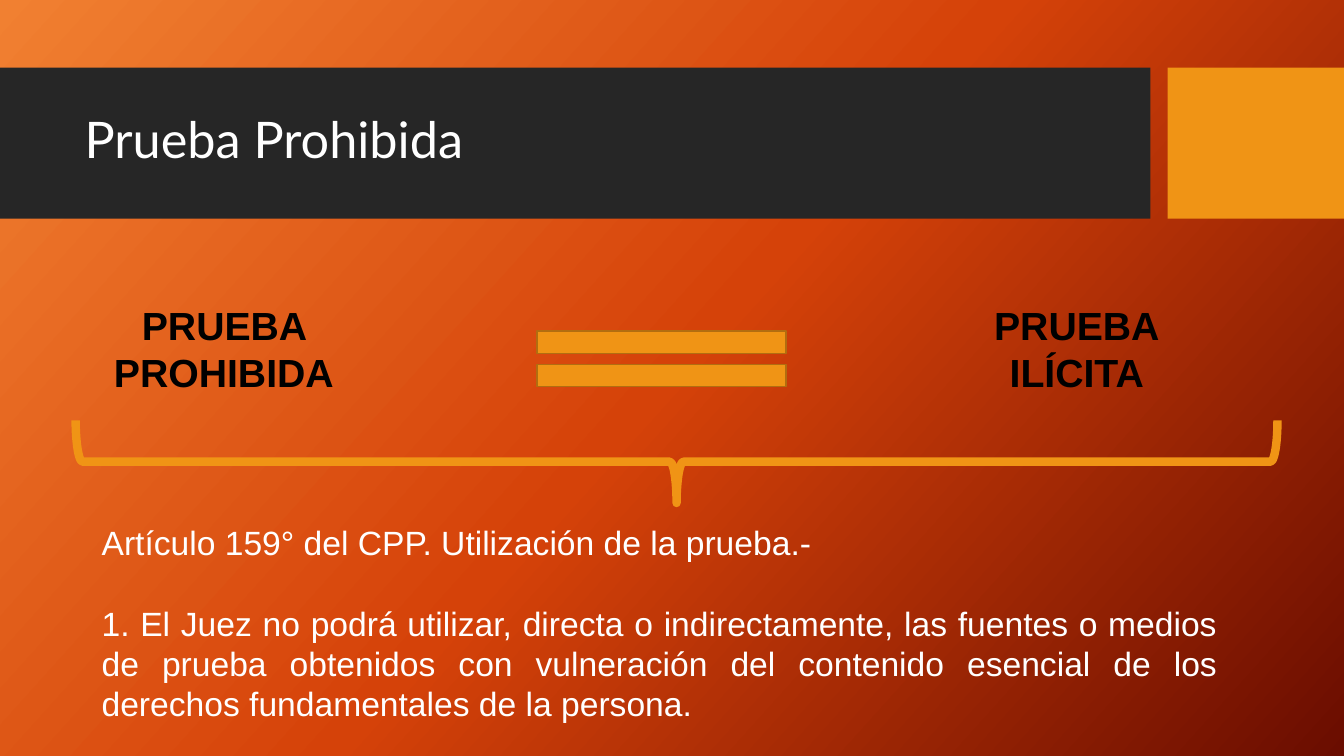
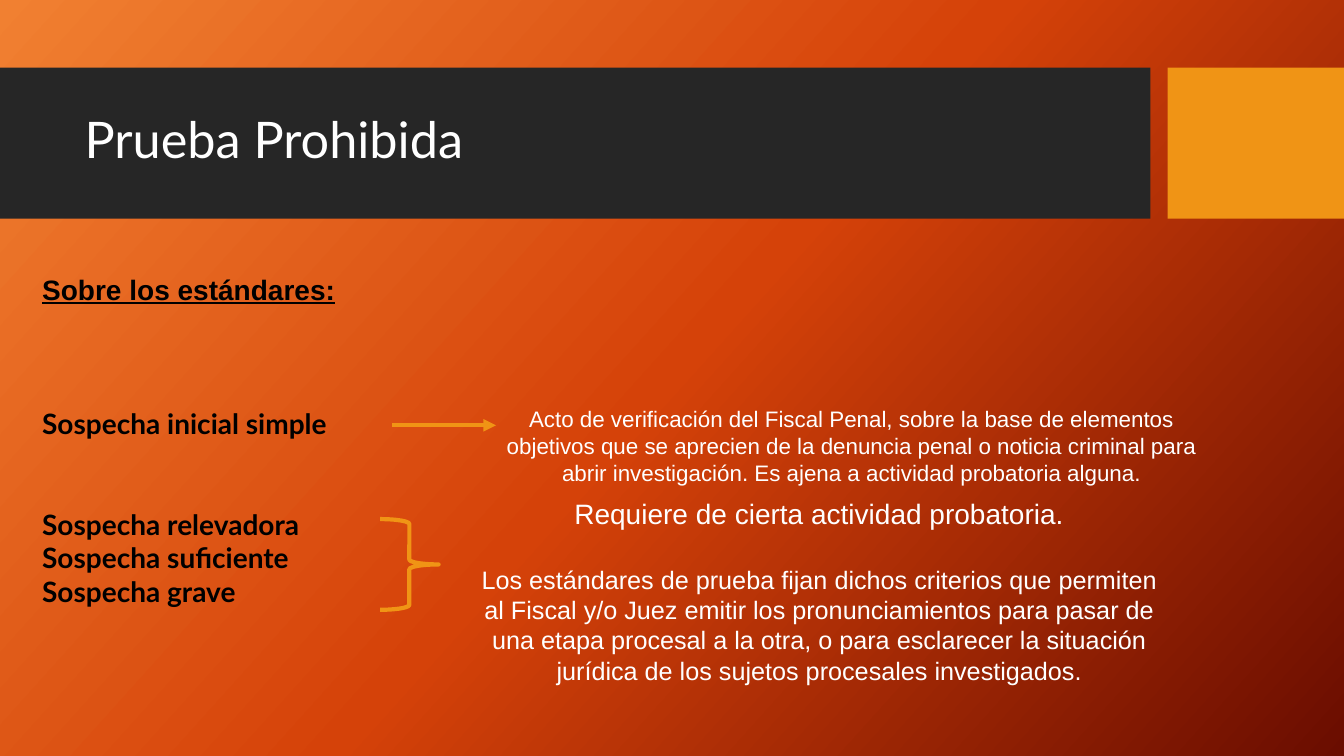
from lxml.etree import SubElement
from pptx import Presentation
from pptx.dml.color import RGBColor
from pptx.enum.shapes import MSO_CONNECTOR, MSO_SHAPE
from pptx.enum.text import MSO_ANCHOR, PP_ALIGN
from pptx.oxml.ns import qn
from pptx.util import Inches, Pt

# Shared colours
WHITE = RGBColor(0xFF, 0xFF, 0xFF)
BLACK = RGBColor(0x00, 0x00, 0x00)
CHARCOAL = RGBColor(0x26, 0x26, 0x26)
AMBER = RGBColor(0xF0, 0x94, 0x15)
BROWN = RGBColor(0xB2, 0x6D, 0x10)
BACKGROUND_STOPS = [
    (0, RGBColor(0xF1, 0x80, 0x31)),
    (50, RGBColor(0xD5, 0x42, 0x09)),
    (100, RGBColor(0x6A, 0x0D, 0x00)),
]
BACKGROUND_ANGLE = 42

# Shared text formats
LINE_HEIGHT = 1.2
TITLE = {"name": "Lato", "size": Pt(36)}
ARTICLE = {"name": "Arial", "size": Pt(24)}
TERM = {"name": "Arial", "size": Pt(28), "bold": True}
HEADING = {"name": "Arial", "size": Pt(20), "bold": True, "underline": True}
STANDARD = {"name": "Lato", "size": Pt(20), "bold": True}
REQUIREMENT = {"name": "Arial", "size": Pt(20)}
EXPLANATION = {"name": "Arial", "size": Pt(18)}
DEFINITION = {"name": "Arial", "size": Pt(16)}


def add_text(slide, box, lines, color, alignment, anchor=MSO_ANCHOR.TOP, line_spacing=None):
    """Write lines of (text, format, space before in points) inside the box."""
    frame = slide.shapes.add_textbox(*map(Inches, box)).text_frame
    frame.word_wrap = True
    frame.vertical_anchor = anchor
    for index, (text, text_format, space_before) in enumerate(lines):
        paragraph = frame.add_paragraph() if index else frame.paragraphs[0]
        paragraph.alignment = alignment
        paragraph.space_before = Pt(space_before)
        paragraph.line_spacing = line_spacing or Pt(text_format["size"].pt * LINE_HEIGHT)
        run = paragraph.add_run()
        run.text = text
        for attribute, value in text_format.items():
            setattr(run.font, attribute, value)
        run.font.color.rgb = color


def add_shape(slide, preset, box, fill=None, line=None, line_width=1):
    shape = slide.shapes.add_shape(preset, *map(Inches, box))
    shape.shadow.inherit = False
    if fill is None:
        shape.fill.background()
    else:
        shape.fill.solid()
        shape.fill.fore_color.rgb = fill
    if line is None:
        shape.line.fill.background()
    else:
        shape.line.color.rgb = line
        shape.line.width = Pt(line_width)
    return shape


def add_brace_below(slide, box):
    """Fit a brace into a wide box, with its tip pointing down."""
    left, top, width, height = box
    upright_box = (left + (width - height) / 2, top + (height - width) / 2, height, width)
    brace = add_shape(slide, MSO_SHAPE.RIGHT_BRACE, upright_box, line=AMBER, line_width=6)
    brace.rotation = 90


def add_arrow(slide, left, top, length):
    arrow = slide.shapes.add_connector(
        MSO_CONNECTOR.STRAIGHT, Inches(left), Inches(top), Inches(left + length), Inches(top))
    arrow.line.color.rgb = AMBER
    arrow.line.width = Pt(3)
    properties = arrow.element.spPr
    SubElement(properties.find(qn("a:ln")), qn("a:tailEnd"), type="triangle")
    SubElement(properties, qn("a:effectLst"))


def paint_background(slide):
    fill = slide.background.fill
    fill.gradient()
    fill.gradient_angle = 360 - BACKGROUND_ANGLE
    stops = slide.element.find(".//" + qn("a:gsLst"))
    for stop in list(stops):
        stops.remove(stop)
    for position, color in BACKGROUND_STOPS:
        stop = SubElement(stops, qn("a:gs"), pos=str(position * 1000))
        SubElement(stop, qn("a:srgbClr"), val=str(color))


def add_titled_slide(presentation, title):
    slide = presentation.slides.add_slide(presentation.slide_layouts[6])
    paint_background(slide)
    # Title band and accent block
    add_shape(slide, MSO_SHAPE.RECTANGLE, (0, 0.67, 11.41, 1.5), fill=CHARCOAL)
    add_shape(slide, MSO_SHAPE.RECTANGLE, (11.58, 0.67, 1.75, 1.5), fill=AMBER)
    add_text(slide, (0.74, 0.82, 10.51, 1.18), [(title, TITLE, 0)], WHITE,
             PP_ALIGN.LEFT, MSO_ANCHOR.MIDDLE, line_spacing=0.9)
    return slide


def add_equivalence(slide, left, top):
    """Two terms joined by an equals sign, gathered by a brace."""
    terms = [(0, ["PRUEBA PROHIBIDA"]), (8.46, ["PRUEBA", "ILÍCITA"])]
    for offset, words in terms:
        add_text(slide, (left + offset, top, 3.36, 1.04),
                 [(word, TERM, 0) for word in words], BLACK, PP_ALIGN.CENTER)
    add_shape(slide, MSO_SHAPE.MATH_EQUAL, (left + 4.34, top + 0.15, 3.36, 0.94),
              fill=AMBER, line=BROWN)
    add_brace_below(slide, (left + 0.21, top + 1.23, 11.92, 0.82))


def add_standards(slide, left, top):
    """Heading and the list of degrees of suspicion."""
    lines = [
        ("Sobre los estándares:", HEADING, 0),
        ("Sospecha inicial simple", STANDARD, 72),
        ("Sospecha relevadora", STANDARD, 48),
        ("Sospecha suficiente", STANDARD, 0),
        ("Sospecha grave", STANDARD, 0),
    ]
    add_text(slide, (left, top, 3.8, 3.47), lines, BLACK, PP_ALIGN.LEFT)


def add_simple_suspicion(slide, left, top):
    """Arrow leading to the definition of the first standard."""
    add_arrow(slide, left, top + 0.25, 1.03)
    definition = (
        "Acto de verificación del Fiscal Penal, sobre la base de elementos objetivos que se "
        "aprecien de la denuncia penal o noticia criminal para abrir investigación. "
        "Es ajena a actividad probatoria alguna.")
    add_text(slide, (left + 1.03, top, 7.05, 0.91), [(definition, DEFINITION, 0)],
             WHITE, PP_ALIGN.CENTER)


def add_higher_suspicions(slide, left, top):
    """Brace leading to the requirement shared by the other standards."""
    add_shape(slide, MSO_SHAPE.RIGHT_BRACE, (left, top + 0.27, 0.58, 0.9),
              line=AMBER, line_width=3)
    lines = [
        ("Requiere de cierta actividad probatoria.", REQUIREMENT, 0),
        ("Los estándares de prueba fijan dichos criterios que permiten al Fiscal y/o Juez "
         "emitir los pronunciamientos para pasar de una etapa procesal a la otra, o para "
         "esclarecer la situación jurídica de los sujetos procesales investigados.",
         EXPLANATION, 24),
    ]
    add_text(slide, (left + 0.83, top, 7.05, 1.99), lines, WHITE, PP_ALIGN.CENTER)


def build_definition_slide(presentation):
    slide = add_titled_slide(presentation, "Prueba Prohibida")
    add_equivalence(slide, 0.54, 2.94)
    # Text of the article
    lines = [
        ("Artículo 159° del CPP. Utilización de la prueba.-", ARTICLE, 0),
        ("1. El Juez no podrá utilizar, directa o indirectamente, las fuentes o medios de "
         "prueba obtenidos con vulneración del contenido esencial de los derechos "
         "fundamentales de la persona.", ARTICLE, 28.8),
    ]
    add_text(slide, (0.91, 5.13, 11.26, 2.1), lines, WHITE, PP_ALIGN.JUSTIFY)


def build_standards_slide(presentation):
    slide = add_titled_slide(presentation, "Prueba Prohibida")
    add_standards(slide, 0.32, 2.65)
    add_simple_suspicion(slide, 3.89, 3.97)
    add_higher_suspicions(slide, 3.77, 4.88)


def main():
    presentation = Presentation()
    presentation.slide_width = Inches(13.33)
    presentation.slide_height = Inches(7.5)
    build_definition_slide(presentation)
    build_standards_slide(presentation)
    presentation.save("out.pptx")


if __name__ == "__main__":
    main()
